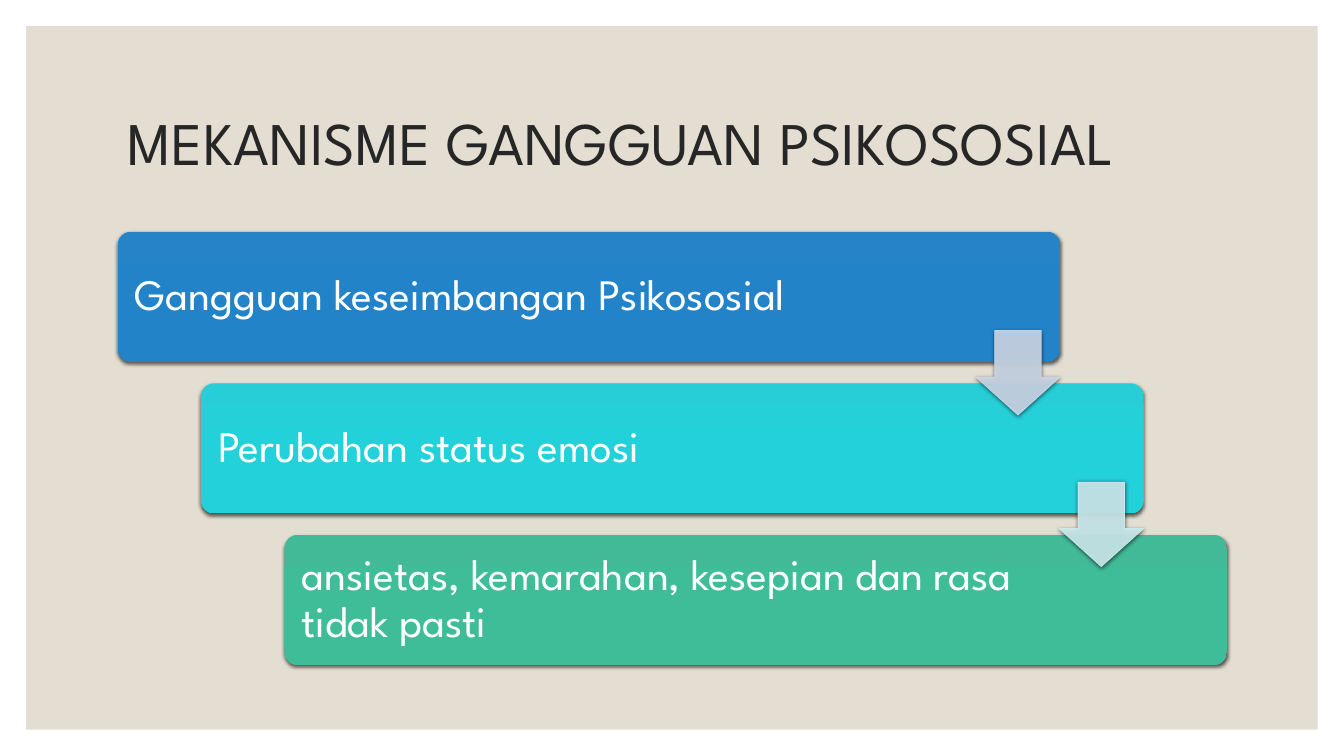
from dataclasses import dataclass

from lxml.etree import SubElement
from pptx import Presentation
from pptx.dml.color import RGBColor
from pptx.enum.shapes import MSO_SHAPE
from pptx.enum.text import MSO_ANCHOR
from pptx.oxml.ns import qn
from pptx.shapes.autoshape import Shape
from pptx.slide import Slide
from pptx.util import Cm, Pt

FONT = "League Spartan"
WHITE = RGBColor(0xFF, 0xFF, 0xFF)
BLACK = RGBColor(0x00, 0x00, 0x00)
SAND = RGBColor(0xE3, 0xDE, 0xD1)
INK = RGBColor(0x26, 0x26, 0x26)
BLUE_TOP = RGBColor(0x26, 0x83, 0xC6)
BLUE = RGBColor(0x22, 0x83, 0xC9)
CYAN_TOP = RGBColor(0x27, 0xCE, 0xD7)
CYAN = RGBColor(0x22, 0xD1, 0xDA)
GREEN_TOP = RGBColor(0x42, 0xBA, 0x97)
GREEN = RGBColor(0x3F, 0xBC, 0x98)
PALE_BLUE = RGBColor(0xCD, 0xD9, 0xEA)
PALE_CYAN = RGBColor(0xCD, 0xED, 0xF0)

LEFT, TOP = 2.97, 5.84
STEP_X, STEP_Y = 2.1, 3.82
BOX_W, BOX_H = 23.75, 3.28
TEXT_GAP = 0.1
ARROW = 2.13
ARROW_DROP = 2.49


@dataclass(frozen=True)
class Stage:
    text: str
    text_width: float
    top_color: RGBColor
    color: RGBColor


STAGES = (
    Stage("Gangguan keseimbangan Psikososial", 20.22, BLUE_TOP, BLUE),
    Stage("Perubahan status emosi", 19.33, CYAN_TOP, CYAN),
    Stage("ansietas, kemarahan, kesepian dan rasa tidak pasti", 19.33,
          GREEN_TOP, GREEN),
)
ARROW_COLORS = (PALE_BLUE, PALE_CYAN)


def add_shape(s: Slide, kind: MSO_SHAPE, x: float, y: float,
              w: float, h: float) -> Shape:
    sp = s.shapes.add_shape(kind, Cm(x), Cm(y), Cm(w), Cm(h))
    sp.shadow.inherit = False
    sp.line.fill.background()
    return sp


def add_text(s: Slide, text: str, x: float, y: float, w: float, h: float, *,
             size: float, color: RGBColor, inset: float | None = None) -> None:
    tf = s.shapes.add_textbox(Cm(x), Cm(y), Cm(w), Cm(h)).text_frame
    tf.word_wrap = True
    tf.vertical_anchor = MSO_ANCHOR.MIDDLE
    if inset is not None:
        tf.margin_left = tf.margin_right = Cm(inset)
        tf.margin_top = tf.margin_bottom = Cm(inset)
    p = tf.paragraphs[0]
    p.line_spacing = 0.9
    r = p.add_run()
    r.text = text
    r.font.name = FONT
    r.font.size = Pt(size)
    r.font.color.rgb = color


def add_shadow(sp: Shape) -> None:
    effects = sp._element.spPr.find(qn("a:effectLst"))
    shadow = SubElement(effects, qn("a:outerShdw"), blurRad=str(Pt(3)),
                        dist=str(Pt(1)), dir="5400000", rotWithShape="0")
    color = SubElement(shadow, qn("a:srgbClr"), val=str(BLACK))
    SubElement(color, qn("a:alpha"), val="63000")


def add_stage(s: Slide, stage: Stage, x: float, y: float) -> None:
    sp = add_shape(s, MSO_SHAPE.ROUNDED_RECTANGLE, x, y, BOX_W, BOX_H)
    sp.adjustments[0] = 0.1
    sp.fill.gradient()
    sp.fill.gradient_angle = 270
    start, end = sp.fill.gradient_stops
    start.color.rgb = stage.top_color
    end.color.rgb = stage.color
    end.position = 0.5
    add_shadow(sp)
    add_text(s, stage.text, x + TEXT_GAP, y + TEXT_GAP, stage.text_width,
             BOX_H - 2 * TEXT_GAP, size=31, color=WHITE, inset=0.33)


def add_arrow(s: Slide, color: RGBColor, x: float, y: float) -> None:
    sp = add_shape(s, MSO_SHAPE.DOWN_ARROW, x, y, ARROW, ARROW)
    sp.adjustments[0] = 0.55
    sp.adjustments[1] = 0.45
    sp.fill.solid()
    sp.fill.fore_color.rgb = color
    sp.line.color.rgb = color
    sp.line.width = Pt(0.5)
    for clr in sp._element.spPr.iter(qn("a:srgbClr")):
        SubElement(clr, qn("a:alpha"), val="90000")
    add_shadow(sp)


def main() -> None:
    prs = Presentation()
    prs.slide_width, prs.slide_height = Cm(33.87), Cm(19.05)
    s = prs.slides.add_slide(prs.slide_layouts[6])
    s.background.fill.solid()
    s.background.fill.fore_color.rgb = WHITE

    panel = add_shape(s, MSO_SHAPE.RECTANGLE, 0.66, 0.66, 32.55, 17.73)
    panel.fill.solid()
    panel.fill.fore_color.rgb = SAND
    add_text(s, "MEKANISME GANGGUAN PSIKOSOSIAL", LEFT, 1.78, 27.94, 3.81,
             size=43.2, color=INK)

    for i, stage in enumerate(STAGES):
        add_stage(s, stage, LEFT + i * STEP_X, TOP + i * STEP_Y)
    for i, color in enumerate(ARROW_COLORS):
        add_arrow(s, color, LEFT + BOX_W - ARROW + i * STEP_X,
                  TOP + ARROW_DROP + i * STEP_Y)

    prs.save("out.pptx")


if __name__ == "__main__":
    main()
